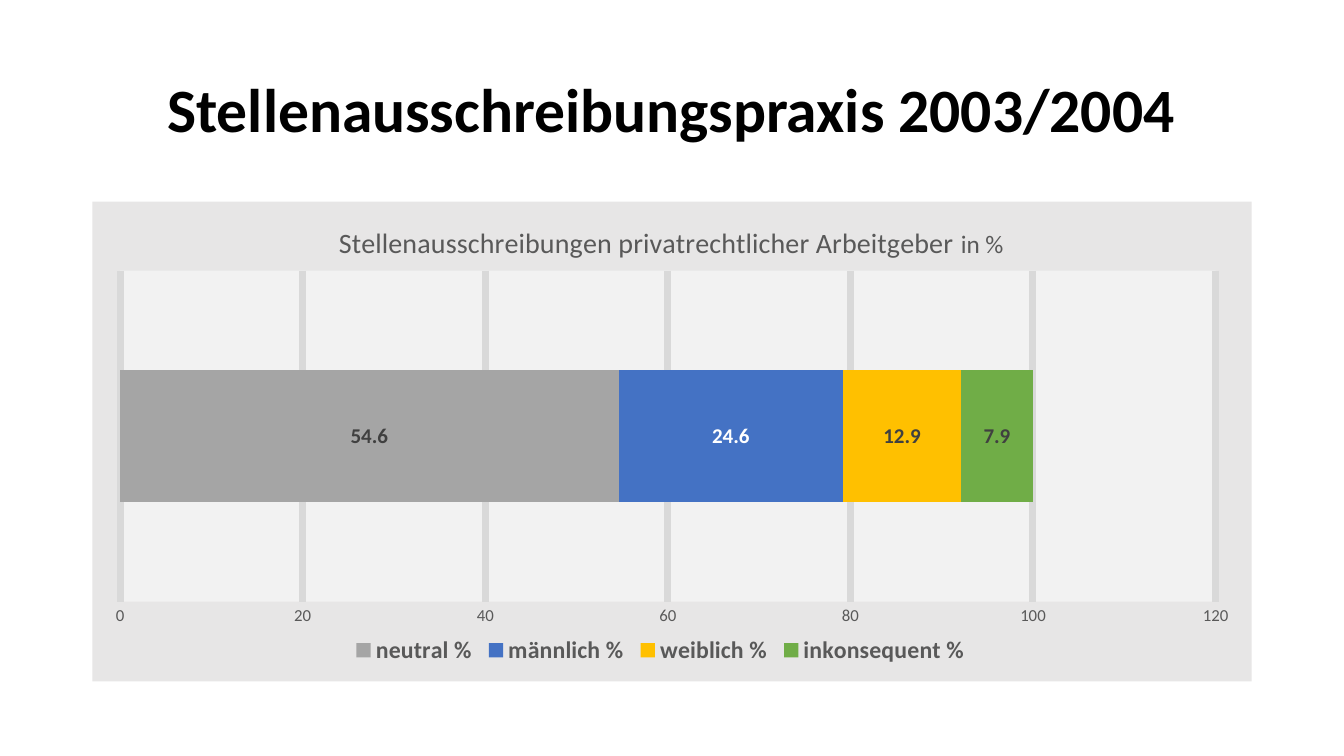
from dataclasses import dataclass

from lxml import etree
from pptx import Presentation
from pptx import util as u
from pptx.chart.data import CategoryChartData
from pptx.dml.color import RGBColor
from pptx.enum import chart as ch, text
from pptx.oxml import parse_xml
from pptx.oxml.ns import nsdecls, qn

PX = 9525  # EMU per px, slide is 1280 x 720 px
FONT = "Calibri"
BLACK = RGBColor(0x00, 0x00, 0x00)
WHITE = RGBColor(0xFF, 0xFF, 0xFF)
DARK = RGBColor(0x40, 0x40, 0x40)
GREY = RGBColor(0x59, 0x59, 0x59)
GRID = RGBColor(0xD9, 0xD9, 0xD9)
CHART_FILL = RGBColor(0xE7, 0xE6, 0xE6)
PLOT_FILL = RGBColor(0xF2, 0xF2, 0xF2)


@dataclass
class Share:
    name: str
    value: float
    color: RGBColor
    label_color: RGBColor = DARK


SHARES = [
    Share("neutral %", 54.6, RGBColor(0xA5, 0xA5, 0xA5)),
    Share("männlich %", 24.6, RGBColor(0x44, 0x72, 0xC4), WHITE),
    Share("weiblich %", 12.9, RGBColor(0xFF, 0xC0, 0x00)),
    Share("inkonsequent %", 7.9, RGBColor(0x70, 0xAD, 0x47)),
]


def px(n: int) -> int:
    return n * PX


def set_font(font, size: int, color: RGBColor, bold: bool = False) -> None:
    font.name, font.size, font.bold = FONT, u.Pt(size), bold
    font.color.rgb = color


def add_run(p, content: str, *, size: int, color: RGBColor, bold: bool = False) -> None:
    r = p.add_run()
    r.text = content
    set_font(r.font, size, color, bold)


def area_fill(color: RGBColor) -> etree.ElementBase:
    return parse_xml(
        f'<c:spPr {nsdecls("c", "a")}><a:solidFill><a:srgbClr val="{color}"/></a:solidFill>'
        "<a:ln><a:noFill/></a:ln></c:spPr>")


def place(element, index: int, inner: bool = False, **fractions: float) -> None:
    """Put a manual layout, in fractions of the chart, at a child index."""
    for old in element.findall(qn("c:layout")):
        element.remove(old)
    target = '<c:layoutTarget val="inner"/>' if inner else ""
    modes = '<c:xMode val="edge"/><c:yMode val="edge"/>'
    sizes = "".join(f'<c:{k} val="{v}"/>' for k, v in fractions.items())
    element.insert(index, parse_xml(
        f'<c:layout {nsdecls("c")}><c:manualLayout>{target}{modes}{sizes}'
        "</c:manualLayout></c:layout>"))


def add_title(s) -> None:
    tf = s.shapes.add_textbox(px(88), px(38), px(1104), px(139)).text_frame
    tf.word_wrap = True
    tf.vertical_anchor = text.MSO_ANCHOR.MIDDLE
    p = tf.paragraphs[0]
    p.alignment, p.line_spacing = text.PP_ALIGN.CENTER, 0.9
    add_run(p, "Stellenausschreibungspraxis 2003/2004", size=44, color=BLACK, bold=True)


def style_axes(chart) -> None:
    chart.category_axis.visible = False
    axis = chart.value_axis
    axis.minimum_scale, axis.maximum_scale, axis.major_unit = 0, 120, 20
    axis.major_tick_mark = axis.minor_tick_mark = ch.XL_TICK_MARK.NONE
    axis.format.line.fill.background()
    axis.major_gridlines.format.line.color.rgb = GRID
    axis.major_gridlines.format.line.width = u.Pt(5)
    set_font(axis.tick_labels.font, 12, GREY)


def style_series(plot) -> None:
    plot.gap_width, plot.overlap, plot.vary_by_categories = 150, 100, False
    for series, share in zip(plot.series, SHARES):
        series.format.fill.solid()
        series.format.fill.fore_color.rgb = share.color
        labels = series.data_labels
        labels.show_value = True
        labels.position = ch.XL_LABEL_POSITION.CENTER
        set_font(labels.font, 15, share.label_color, bold=True)


def add_share_chart(s) -> None:
    data = CategoryChartData()
    data.categories = ["1"]
    for share in SHARES:
        data.add_series(share.name, [share.value])
    chart = s.shapes.add_chart(
        ch.XL_CHART_TYPE.BAR_STACKED, px(88), px(192), px(1104), px(457), data).chart
    set_font(chart.font, 10, BLACK)

    chart.has_title = True
    p = chart.chart_title.text_frame.paragraphs[0]
    add_run(p, "Stellenausschreibungen privatrechtlicher Arbeitgeber ", size=20, color=GREY)
    add_run(p, "in %", size=18, color=GREY)

    chart.has_legend = True
    chart.legend.position = ch.XL_LEGEND_POSITION.BOTTOM
    chart.legend.include_in_layout = False
    set_font(chart.legend.font, 17, GREY, bold=True)

    style_axes(chart)
    style_series(chart.plots[0])

    root = chart.element.find(qn("c:chart"))
    plot_area = root.find(qn("c:plotArea"))
    plot_area.append(area_fill(PLOT_FILL))
    root.addnext(area_fill(CHART_FILL))
    place(root.find(qn("c:title")), 1, x=0.21, y=0.04)
    place(plot_area, 0, inner=True, x=0.024, y=0.144, w=0.945, h=0.69)
    place(root.find(qn("c:legend")), 1, x=0.22, y=0.9, w=0.54, h=0.07)


def main() -> None:
    prs = Presentation()
    prs.slide_width, prs.slide_height = px(1280), px(720)
    s = prs.slides.add_slide(prs.slide_layouts[6])
    add_title(s)
    add_share_chart(s)
    prs.save("out.pptx")


if __name__ == "__main__":
    main()
